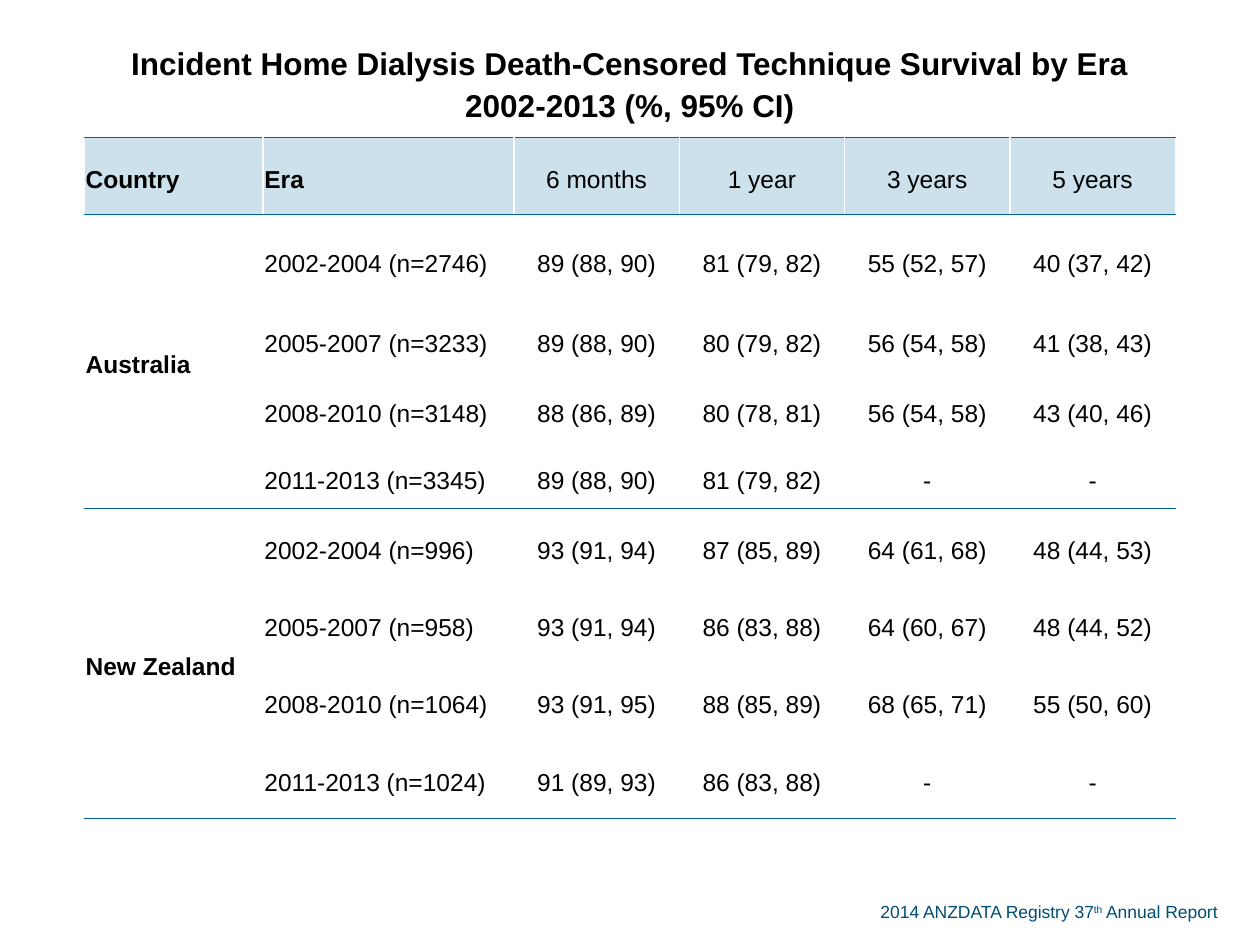
from typing import NamedTuple

from lxml.etree import SubElement
from pptx import Presentation
from pptx.dml.color import RGBColor
from pptx.enum.text import MSO_ANCHOR, PP_ALIGN
from pptx.oxml.ns import qn
from pptx.util import Pt

FONT = "Arial"
HEX = {"text": "000000", "head": "CCE1EB", "rule": "006699", "foot": "004D73"}
WIDTHS = [102.2, 143.3] + [94.5] * 4
HEIGHTS = [64, 44, 52, 39.6, 41, 35.3] + [44.2] * 4
TITLE = "Incident Home Dialysis Death-Censored Technique Survival by Era\v2002-2013 (%, 95% CI)"
HEAD = ["Country", "Era", "6 months", "1 year", "3 years", "5 years"]
RULED = {0, 1, 5, 9}  # rows with a line below


class Group(NamedTuple):
    name: str
    rows: list[list[str]]


GROUPS = [
    Group("Australia", [
        ["2002-2004 (n=2746)", "89 (88, 90)", "81 (79, 82)", "55 (52, 57)", "40 (37, 42)"],
        ["2005-2007 (n=3233)", "89 (88, 90)", "80 (79, 82)", "56 (54, 58)", "41 (38, 43)"],
        ["2008-2010 (n=3148)", "88 (86, 89)", "80 (78, 81)", "56 (54, 58)", "43 (40, 46)"],
        ["2011-2013 (n=3345)", "89 (88, 90)", "81 (79, 82)", "-", "-"],
    ]),
    Group("New Zealand", [
        ["2002-2004 (n=996)", "93 (91, 94)", "87 (85, 89)", "64 (61, 68)", "48 (44, 53)"],
        ["2005-2007 (n=958)", "93 (91, 94)", "86 (83, 88)", "64 (60, 67)", "48 (44, 52)"],
        ["2008-2010 (n=1064)", "93 (91, 95)", "88 (85, 89)", "68 (65, 71)", "55 (50, 60)"],
        ["2011-2013 (n=1024)", "91 (89, 93)", "86 (83, 88)", "-", "-"],
    ]),
]


def write(para, text: str, size: float = 14, bold: bool = False,
          color: str = "text", lift: int = 0) -> None:
    """Add text to a paragraph; lift is the superscript percentage."""
    for i, part in enumerate(text.split("\v")):
        if i:
            para.add_line_break()
        run = para.add_run()
        run.text = part
        font = run.font
        font.name, font.size, font.bold = FONT, Pt(size), bold
        font.color.rgb = RGBColor.from_string(HEX[color])
        if lift:
            run._r.get_or_add_rPr().set("baseline", str(lift * 1000))


def fill_cell(cell, text: str, center: bool = False, size: float = 14,
              bold: bool = False) -> None:
    para = cell.text_frame.paragraphs[0]
    para.alignment = PP_ALIGN.CENTER if center else PP_ALIGN.LEFT
    para.line_spacing = 1.19
    para.space_after = Pt(14)
    write(para, text, size=size, bold=bold)


def rule(cell, side: str, pos: int) -> None:
    """Insert a border line before the fill of a cell."""
    props = cell._tc.get_or_add_tcPr()
    line = SubElement(props, qn(f"a:{side}"), w=str(Pt(0.5)))
    SubElement(SubElement(line, qn("a:solidFill")), qn("a:srgbClr"), val=HEX["rule"])
    props.insert(pos, line)


def style(cell, row: int) -> None:
    cell.vertical_anchor = MSO_ANCHOR.MIDDLE
    cell.margin_left = cell.margin_right = cell.margin_top = Pt(0.72)
    cell.margin_bottom = Pt(0)
    if row == 1:
        cell.fill.solid()
        cell.fill.fore_color.rgb = RGBColor.from_string(HEX["head"])
    else:
        cell.fill.background()
    last = row + (cell.span_height if cell.is_merge_origin else 1) - 1
    pos = 0
    if row - 1 in RULED:
        rule(cell, "lnT", pos)
        pos += 1
    if last in RULED:
        rule(cell, "lnB", pos)


def add_grid(slide) -> None:
    frame = slide.shapes.add_table(len(HEIGHTS), len(WIDTHS), Pt(48.2), Pt(14.8),
                                   Pt(sum(WIDTHS)), Pt(sum(HEIGHTS)))
    table = frame.table
    table.first_row = table.horz_banding = False
    for col, width in zip(table.columns, WIDTHS):
        col.width = Pt(width)
    for row, height in zip(table.rows, HEIGHTS):
        row.height = Pt(height)

    table.cell(0, 0).merge(table.cell(0, len(WIDTHS) - 1))
    fill_cell(table.cell(0, 0), TITLE, center=True, size=18, bold=True)
    for c, text in enumerate(HEAD):
        fill_cell(table.cell(1, c), text, center=c > 1, bold=c < 2)

    top = 2
    for group in GROUPS:
        end = top + len(group.rows)
        table.cell(top, 0).merge(table.cell(end - 1, 0))
        fill_cell(table.cell(top, 0), group.name, bold=True)
        for r, row in enumerate(group.rows, top):
            for c, text in enumerate(row, 1):
                fill_cell(table.cell(r, c), text, center=c > 1)
        top = end

    for r in range(len(HEIGHTS)):
        for c in range(len(WIDTHS)):
            style(table.cell(r, c), r)


def add_foot(slide) -> None:
    box = slide.shapes.add_textbox(Pt(496), Pt(511.2), Pt(215.3), Pt(19.4))
    box.text_frame.word_wrap = True
    para = box.text_frame.paragraphs[0]
    for text, lift in [("2014 ANZDATA Registry 37", 0), ("th", 30), (" Annual Report", 0)]:
        write(para, text, size=10, color="foot", lift=lift)


def main() -> None:
    deck = Presentation()
    deck.slide_width, deck.slide_height = Pt(720), Pt(540)
    slide = deck.slides.add_slide(deck.slide_layouts[6])
    add_foot(slide)
    add_grid(slide)
    deck.save("out.pptx")


if __name__ == "__main__":
    main()
